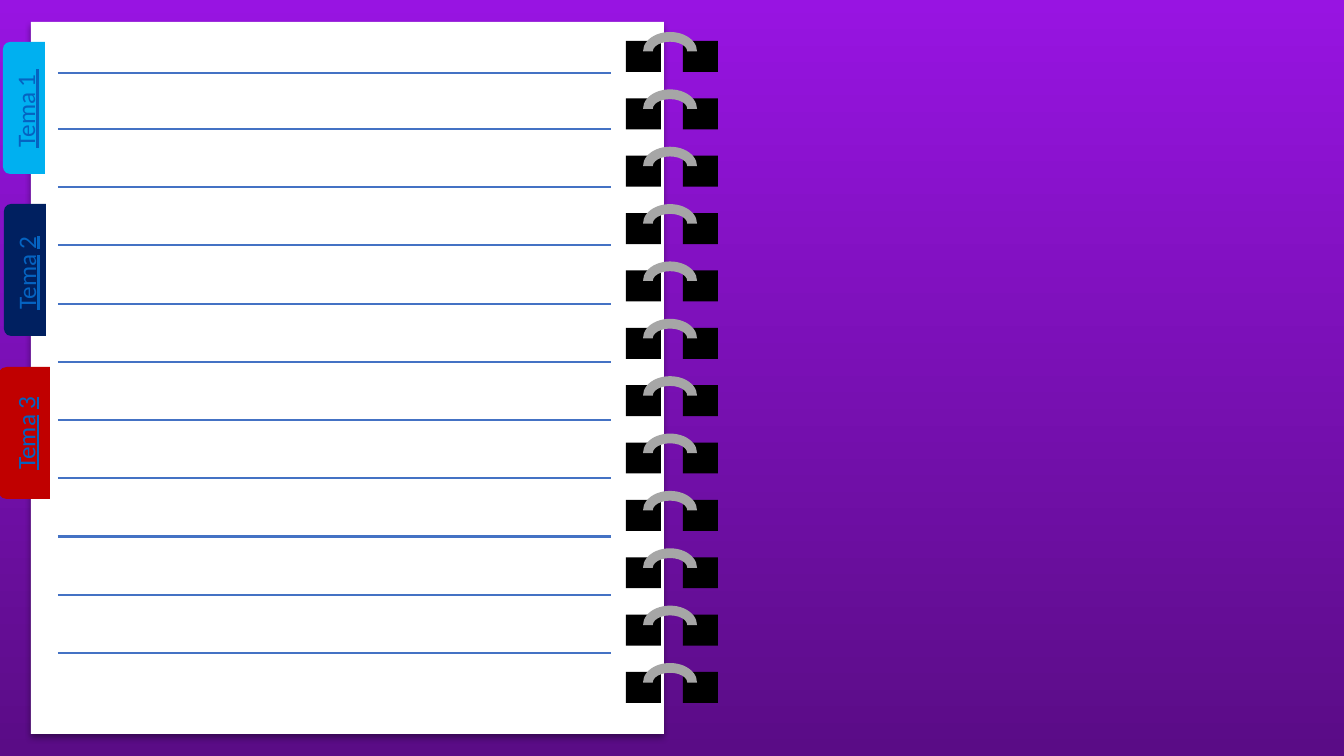
from lxml.etree import SubElement
from pptx import Presentation
from pptx.dml.color import RGBColor
from pptx.enum.shapes import MSO_CONNECTOR, MSO_SHAPE
from pptx.enum.text import MSO_ANCHOR, PP_ALIGN
from pptx.oxml import parse_xml
from pptx.oxml.ns import nsdecls, qn
from pptx.util import Pt

PX = 914400 / 100.8
SLIDE_W, SLIDE_H = 1344, 756

PURPLE = RGBColor(0x98, 0x14, 0xE2)
DEEP_PURPLE = RGBColor(0x5A, 0x0C, 0x86)
WHITE = RGBColor(0xFF, 0xFF, 0xFF)
BLACK = RGBColor(0, 0, 0)
RULE_BLUE = RGBColor(0x44, 0x72, 0xC4)
RING_GREY = RGBColor(0xA6, 0xA6, 0xA6)
LINK_BLUE = RGBColor(0x05, 0x63, 0xC1)
SKY = RGBColor(0x00, 0xB0, 0xF0)
NAVY = RGBColor(0x00, 0x20, 0x60)
RED = RGBColor(0xC0, 0x00, 0x00)

# Tabs: box before rotation, fill, runs as (text, underlined)
TABS = [
    ((-42, 87, 132, 42), SKY, [("Tema 1 ", True)]),
    ((-41, 249, 132, 42), NAVY,
     [("Tema", True), (" ", False), ("2", True), (" ", False)]),
    ((-42, 407, 132, 52), RED, [("Tema", True), (" ", False), ("3", True)]),
]

PAGE = (31, 22, 633, 712)
RULE_LEFT, RULE_RIGHT = 58, 611
TOP_RULE, SECOND_RULE, LAST_RULE, RULE_GAPS = 73, 129, 653, 9
RING_COUNT, FIRST_RING, LAST_RING = 12, 32, 663
RING_PARTS = [  # preset, left, drop below ring top, width, height, fill
    (MSO_SHAPE.RECTANGLE, 683, 9, 35, 31, BLACK),
    (MSO_SHAPE.RECTANGLE, 626, 9, 35, 31, BLACK),
    (MSO_SHAPE.BLOCK_ARC, 643, 0, 54, 39, RING_GREY),
]


def emu(px):
    return round(px * PX)


def add_plain(shapes, preset, box, fill=None):
    """Add a preset shape without outline or shadow."""
    shape = shapes.add_shape(preset, *map(emu, box))
    shape.shadow.inherit = False
    shape.line.fill.background()
    if fill is not None:
        shape.fill.solid()
        shape.fill.fore_color.rgb = fill
    return shape


def add_backdrop(shapes):
    backdrop = add_plain(shapes, MSO_SHAPE.RECTANGLE, (0, -4, SLIDE_W, SLIDE_H + 4))
    backdrop.fill.gradient()
    backdrop.fill.gradient_angle = 270
    for stop, position, color in zip(backdrop.fill.gradient_stops, (0, 1),
                                     (PURPLE, DEEP_PURPLE)):
        stop.position = position
        stop.color.rgb = color


def add_page(shapes):
    page = add_plain(shapes, MSO_SHAPE.RECTANGLE, PAGE, WHITE)
    effects = page._element.spPr.find(qn("a:effectLst"))
    effects.append(parse_xml(
        f'<a:outerShdw {nsdecls("a")} blurRad="{Pt(4)}" dist="{Pt(3)}" '
        'dir="5400000" algn="t" rotWithShape="0"><a:srgbClr val="000000">'
        '<a:alpha val="40000"/></a:srgbClr></a:outerShdw>'))


def add_rules(shapes):
    pitch = (LAST_RULE - SECOND_RULE) / RULE_GAPS
    rules = shapes.add_group_shape().shapes
    for y in [TOP_RULE] + [SECOND_RULE + i * pitch for i in range(RULE_GAPS + 1)]:
        rule = rules.add_connector(MSO_CONNECTOR.STRAIGHT, emu(RULE_LEFT), emu(y),
                                   emu(RULE_RIGHT), emu(y))
        rule.line.color.rgb = RULE_BLUE
        rule.line.width = Pt(1.5)
        SubElement(rule._element.spPr, qn("a:effectLst"))


def add_rings(shapes):
    pitch = (LAST_RING - FIRST_RING) / (RING_COUNT - 1)
    for i in range(RING_COUNT):
        ring = shapes.add_group_shape().shapes
        top = FIRST_RING + i * pitch
        for preset, left, drop, width, height, fill in RING_PARTS:
            add_plain(ring, preset, (left, top + drop, width, height), fill)


def add_tab(shapes, box, fill, runs):
    tab = add_plain(shapes, MSO_SHAPE.ROUND_2_SAME_RECTANGLE, box, fill)
    tab.rotation = 270
    tab._element.spPr.find(qn("a:xfrm")).set("flipH", "1")
    tab.text_frame.word_wrap = True
    tab.text_frame.vertical_anchor = MSO_ANCHOR.MIDDLE
    label = tab.text_frame.paragraphs[0]
    label.alignment = PP_ALIGN.CENTER
    for text, underlined in runs:
        run = label.add_run()
        run.text = text
        run.font.name = "Calibri"
        run.font.size = Pt(18)
        run.font.underline = underlined
        run.font.color.rgb = LINK_BLUE if underlined else WHITE


def main():
    deck = Presentation()
    deck.slide_width, deck.slide_height = emu(SLIDE_W), emu(SLIDE_H)
    shapes = deck.slides.add_slide(deck.slide_layouts[6]).shapes
    add_backdrop(shapes)
    add_page(shapes)
    add_rules(shapes)
    add_rings(shapes)
    for box, fill, runs in TABS:
        add_tab(shapes, box, fill, runs)
    deck.save("out.pptx")


if __name__ == "__main__":
    main()
